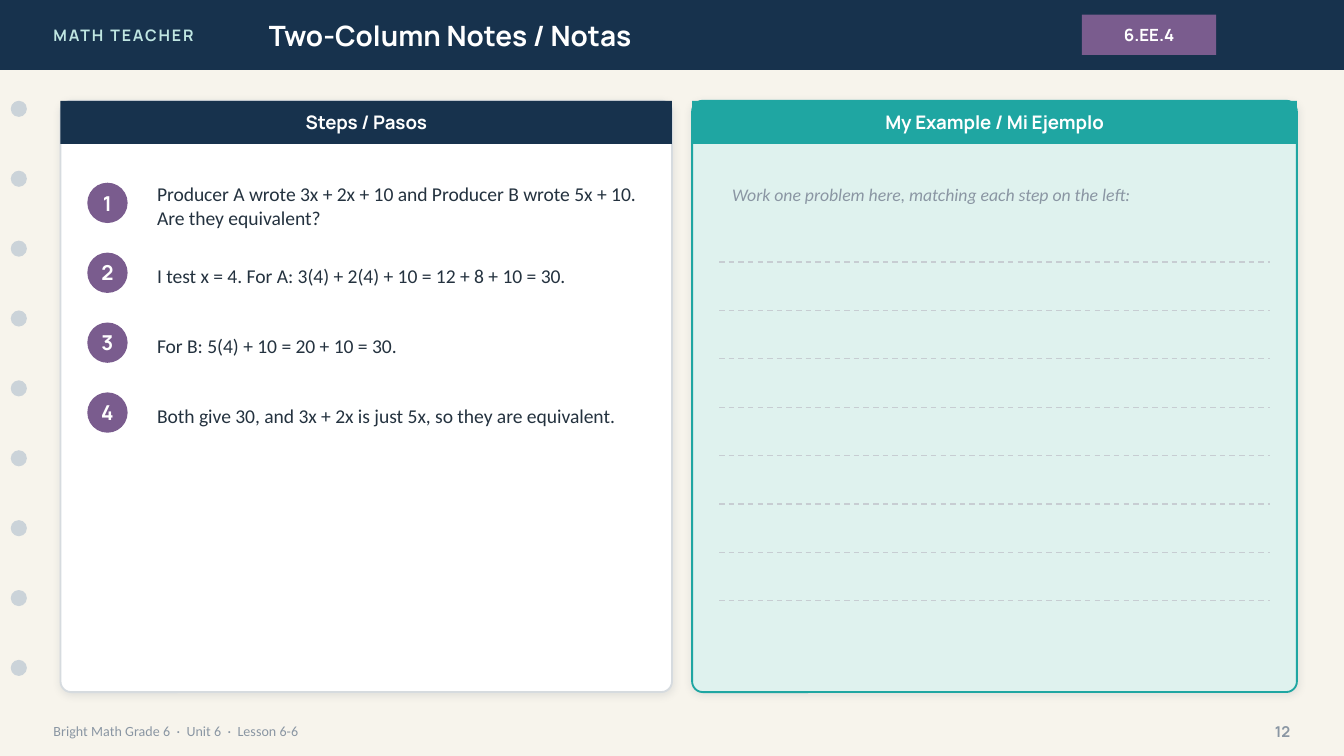
from lxml import etree
from pptx import Presentation
from pptx.dml.color import RGBColor
from pptx.enum.dml import MSO_LINE
from pptx.enum.shapes import MSO_CONNECTOR, MSO_SHAPE
from pptx.enum.text import MSO_ANCHOR, MSO_AUTO_SIZE, PP_ALIGN
from pptx.oxml import parse_xml
from pptx.oxml.ns import nsdecls, qn
from pptx.util import Inches, Pt

RECT, ROUNDED, OVAL = MSO_SHAPE.RECTANGLE, MSO_SHAPE.ROUNDED_RECTANGLE, MSO_SHAPE.OVAL
LEFT, CENTER, RIGHT = PP_ALIGN.LEFT, PP_ALIGN.CENTER, PP_ALIGN.RIGHT
MIDDLE, NO_AUTOFIT = MSO_ANCHOR.MIDDLE, MSO_AUTO_SIZE.NONE
STRAIGHT, DASH = MSO_CONNECTOR.STRAIGHT, MSO_LINE.DASH

NAVY, TEAL, PURPLE, WHITE, GRAY = "17324D", "1FA6A2", "7A5C8E", "FFFFFF", "8A96A3"
color = RGBColor.from_string

FORMATS = {
    "brand": {"name": "Manrope", "size": Pt(8.5), "bold": True},
    "title": {"name": "Manrope", "size": Pt(15), "bold": True},
    "standard": {"name": "Manrope", "size": Pt(9), "bold": True},
    "heading": {"name": "Manrope", "size": Pt(10), "bold": True},
    "number": {"name": "Manrope", "size": Pt(11), "bold": True},
    "step": {"name": "Calibri", "size": Pt(10.5)},
    "hint": {"name": "Calibri", "size": Pt(9.5), "italic": True},
    "footer": {"name": "Calibri", "size": Pt(7.5)},
    "page": {"name": "Manrope", "size": Pt(8), "bold": True},
}

prs = Presentation()
prs.slide_width = Inches(10)
prs.slide_height = Inches(10 * 9 / 16)
slide = prs.slides.add_slide(prs.slide_layouts[5])
slide.background.fill.solid()
slide.background.fill.fore_color.rgb = color("F7F4EC")


def add_block(kind, left, top, width, height, fill):
    block = slide.shapes.add_shape(kind, Inches(left), Inches(top), Inches(width), Inches(height))
    block.shadow.inherit = False
    block.fill.solid()
    block.fill.fore_color.rgb = color(fill)
    block.line.fill.background()
    return block


def write(holder, text, style, ink, align=LEFT, box=None):
    """Fill a shape with text, or a new text box at box if holder is None."""
    if holder is None:
        holder = slide.shapes.add_textbox(*map(Inches, box))
    frame = holder.text_frame
    frame.auto_size = NO_AUTOFIT
    frame.word_wrap = True
    frame.vertical_anchor = MIDDLE
    frame.text = text
    frame.paragraphs[0].alignment = align
    font = frame.paragraphs[0].runs[0].font
    for attribute, value in FORMATS[style].items():
        setattr(font, attribute, value)
    font.color.rgb = color(ink)
    return holder


# Header band
band = add_block(RECT, 0, 0, 10, 0.52, NAVY)
title = slide.shapes.title
title.left, title.top, title.width, title.height = map(Inches, (1.9, 0, 5.6, 0.52))
write(title, "Two-Column Notes / Notas", "title", WHITE)
band._element.addnext(title._element)

brand = write(None, "MATH TEACHER", "brand", "BFE6E2", box=(0.3, 0, 2.4, 0.52))
brand.text_frame.paragraphs[0].runs[0].font._element.set("spc", "100")
standard = add_block(RECT, 8.05, 0.11, 1, 0.3, PURPLE)
write(standard, "6.EE.4", "standard", WHITE, CENTER)

# Binder holes
for hole in range(9):
    add_block(OVAL, 0.08, 0.75 + hole * 0.52, 0.12, 0.12, "CBD3D9")

# Footer
write(None, "Bright Math Grade 6  ·  Unit 6  ·  Lesson 6-6", "footer", GRAY, box=(0.3, 5.3, 7, 0.28))
write(None, "12", "page", GRAY, RIGHT, (9.2, 5.3, 0.5, 0.28))

# Two note columns
columns = [
    ("Steps / Pasos", 0.45, 4.55, WHITE, "D6DBDF", NAVY),
    ("My Example / Mi Ejemplo", 5.15, 4.5, "DFF2EE", TEAL, TEAL),
]
for heading, left, width, paper, border, accent in columns:
    card = add_block(ROUNDED, left, 0.75, width, 4.4, paper)
    card.adjustments[0] = 0.018
    card.line.color.rgb = color(border)
    card.line.width = Pt(1)
    effects = card._element.spPr.find(qn("a:effectLst"))
    effects.append(parse_xml(
        f'<a:outerShdw {nsdecls("a")} blurRad="{Pt(4)}" dist="{Pt(1)}" dir="5400000" '
        'algn="bl" rotWithShape="0"><a:srgbClr val="1C2E42"><a:alpha val="10000"/>'
        '</a:srgbClr></a:outerShdw>'))
    write(add_block(RECT, left, 0.75, width, 0.32, accent), heading, "heading", WHITE, CENTER)

# Worked steps
steps = [
    "Producer A wrote 3x + 2x + 10 and Producer B wrote 5x + 10. Are they equivalent?",
    "I test x = 4. For A: 3(4) + 2(4) + 10 = 12 + 8 + 10 = 30.",
    "For B: 5(4) + 10 = 20 + 10 = 30.",
    "Both give 30, and 3x + 2x is just 5x, so they are equivalent.",
]
for index, step in enumerate(steps):
    top = 1.3 + index * 0.52
    add_block(OVAL, 0.65, top + 0.06, 0.3, 0.3, PURPLE)
    write(None, str(index + 1), "number", WHITE, CENTER, (0.65, top + 0.06, 0.3, 0.3))
    write(None, step, "step", "24323F", box=(1.07, top, 3.78, 0.46))

# Writing lines for the student's example
write(None, "Work one problem here, matching each step on the left:", "hint", GRAY,
      box=(5.35, 1.25, 4.1, 0.4))
for row in range(8):
    y = Inches(1.95 + row * 0.36)
    rule = slide.shapes.add_connector(STRAIGHT, Inches(5.35), y, Inches(9.45), y)
    rule.line.color.rgb = color("C7CDD2")
    rule.line.width = Pt(0.75)
    rule.line.dash_style = DASH
    etree.SubElement(rule._element.spPr, qn("a:effectLst"))

prs.save("out.pptx")
